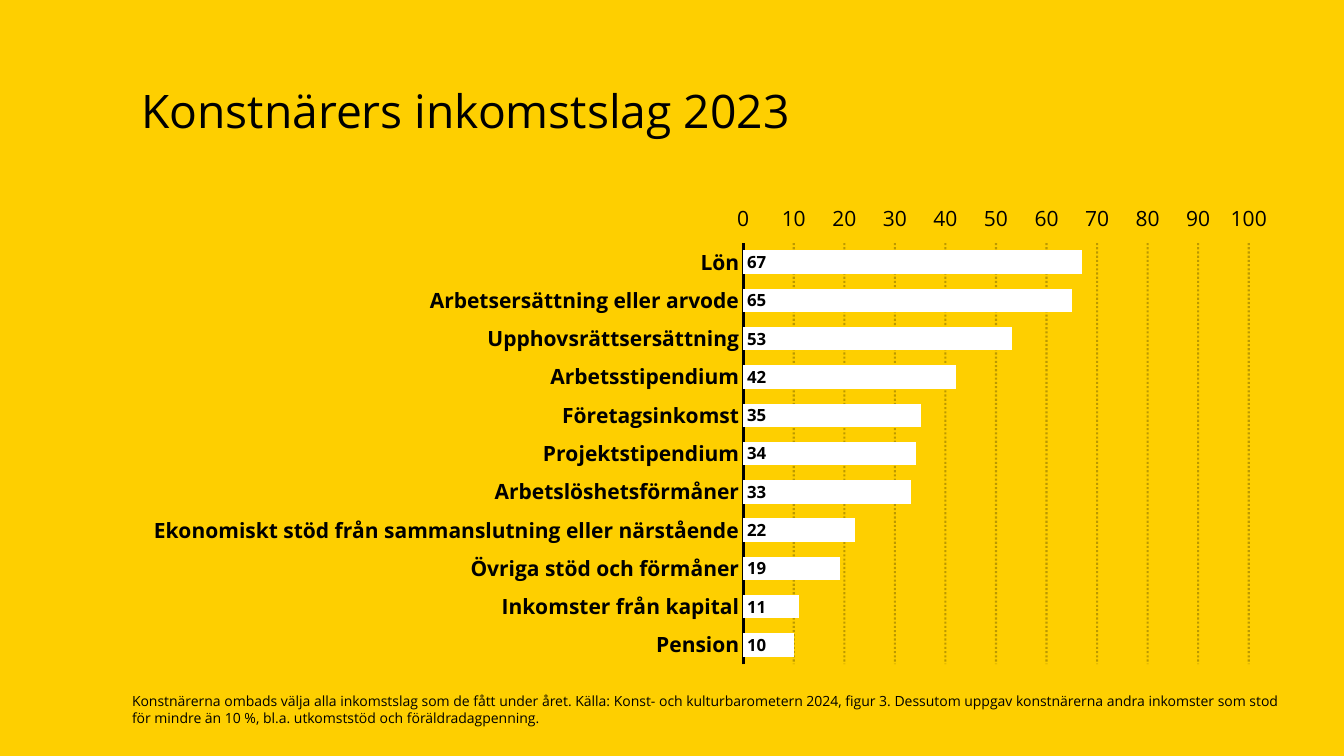
from dataclasses import dataclass

from lxml import etree
from pptx import Presentation
from pptx import util as u
from pptx.chart.data import CategoryChartData
from pptx.dml.color import RGBColor
from pptx.enum import chart as ch, dml, text
from pptx.oxml.ns import qn


@dataclass(frozen=True)
class Theme:
    back: RGBColor = RGBColor(0xFE, 0xCF, 0x00)
    ink: RGBColor = RGBColor(0, 0, 0)
    bar: RGBColor = RGBColor(0xFF, 0xFF, 0xFF)
    face: str = "Open Sans"
    title: int = 33
    axis: int = 15
    label: int = 12
    note: int = 10


THEME = Theme()

TITLE = "Konstnärers inkomstslag 2023"
NOTE = (
    "Konstnärerna ombads välja alla inkomstslag som de fått under året. "
    "Källa: Konst- och kulturbarometern 2024, figur 3. Dessutom uppgav "
    "konstnärerna andra inkomster som stod för mindre än 10\u00a0%, bl.a. "
    "utkomststöd och föräldradagpenning."
)
INCOME = {
    "Lön": 67,
    "Arbetsersättning eller arvode": 65,
    "Upphovsrättsersättning": 53,
    "Arbetsstipendium": 42,
    "Företagsinkomst": 35,
    "Projektstipendium": 34,
    "Arbetslöshetsförmåner": 33,
    "Ekonomiskt stöd från sammanslutning eller närstående": 22,
    "Övriga stöd och förmåner": 19,
    "Inkomster från kapital": 11,
    "Pension": 10,
}


def put(item, values):
    """Set each attribute named in a dict of format values."""
    for name, value in values.items():
        setattr(item, name, value)


def box(*sides):
    return dict(zip(("left", "top", "width", "height"), map(u.Inches, sides)))


def style(font, size, bold=False):
    put(font, {"name": THEME.face, "size": u.Pt(size), "bold": bold})
    font.color.rgb = THEME.ink


def add_title(slide):
    title = slide.shapes.title
    put(title, box(1.3, 0.4, 11.12, 1.45))
    frame = title.text_frame
    frame.text = TITLE
    put(frame, {"vertical_anchor": text.MSO_ANCHOR.MIDDLE, "word_wrap": True})
    line = frame.paragraphs[0]
    put(line, {"alignment": text.PP_ALIGN.LEFT, "line_spacing": 0.9})
    style(line.font, THEME.title)


def add_note(slide):
    frame = slide.shapes.add_textbox(**box(1.31, 6.82, 11.5, 0.44)).text_frame
    frame.text = NOTE
    put(frame, {
        "word_wrap": True,
        "margin_left": 0,
        "auto_size": text.MSO_AUTO_SIZE.SHAPE_TO_FIT_TEXT,
    })
    style(frame.paragraphs[0].font, THEME.note)


def set_plot(chart, **area):
    """Fix the inner plot area, as fractions of the chart."""
    plot = chart.plots[0]._element.getparent()
    for old in plot.findall(qn("c:layout")):
        plot.remove(old)
    layout = etree.Element(qn("c:layout"))
    plot.insert(0, layout)
    manual = etree.SubElement(layout, qn("c:manualLayout"))
    modes = {"layoutTarget": "inner", "xMode": "edge", "yMode": "edge"}
    for name, value in {**modes, **area}.items():
        etree.SubElement(manual, qn(f"c:{name}")).set("val", str(value))


def set_axes(chart):
    cats, vals = chart.category_axis, chart.value_axis
    put(cats, {
        "reverse_order": True,
        "major_tick_mark": ch.XL_TICK_MARK.NONE,
        "has_major_gridlines": False,
    })
    style(cats.tick_labels.font, THEME.axis, bold=True)
    cats.format.line.color.rgb = THEME.ink
    cats.format.line.width = u.Pt(2)

    put(vals, {
        "minimum_scale": 0,
        "maximum_scale": 100,
        "major_unit": 10,
        "major_tick_mark": ch.XL_TICK_MARK.OUTSIDE,
        "has_major_gridlines": True,
    })
    style(vals.tick_labels.font, THEME.axis)
    vals.format.line.fill.background()
    grid = vals.major_gridlines.format.line
    grid.color.rgb = THEME.ink
    put(grid, {"width": u.Pt(1.5), "dash_style": dml.MSO_LINE.ROUND_DOT})
    tint = vals.major_gridlines._xAx.find(".//" + qn("a:srgbClr"))
    etree.SubElement(tint, qn("a:alpha")).set("val", "25000")


def set_bars(chart):
    plot = chart.plots[0]
    put(plot, {"gap_width": 71, "vary_by_categories": False})
    series = plot.series[0]
    series.format.fill.solid()
    series.format.fill.fore_color.rgb = THEME.bar
    series.format.line.color.rgb = THEME.bar
    series.format.line.width = u.Pt(0)
    labels = series.data_labels
    put(labels, {
        "show_value": True,
        "position": ch.XL_LABEL_POSITION.INSIDE_BASE,
    })
    style(labels.font, THEME.label, bold=True)


def add_bars(slide):
    data = CategoryChartData()
    data.categories = list(INCOME)
    data.add_series("Series 1", list(INCOME.values()))
    place = box(1.3, 1.94, 11.5, 4.76).values()
    chart = slide.shapes.add_chart(
        ch.XL_CHART_TYPE.BAR_CLUSTERED, *place, data).chart
    put(chart, {"has_legend": False, "has_title": False})
    style(chart.font, THEME.note)
    set_plot(chart, x=0.528, y=0.099, w=0.436, h=0.878)
    set_axes(chart)
    set_bars(chart)


def main():
    deck = Presentation()
    put(deck, {"slide_width": u.Inches(13.33), "slide_height": u.Inches(7.5)})
    slide = deck.slides.add_slide(deck.slide_layouts[5])
    slide.background.fill.solid()
    slide.background.fill.fore_color.rgb = THEME.back
    add_title(slide)
    add_note(slide)
    add_bars(slide)
    deck.save("out.pptx")


if __name__ == "__main__":
    main()
